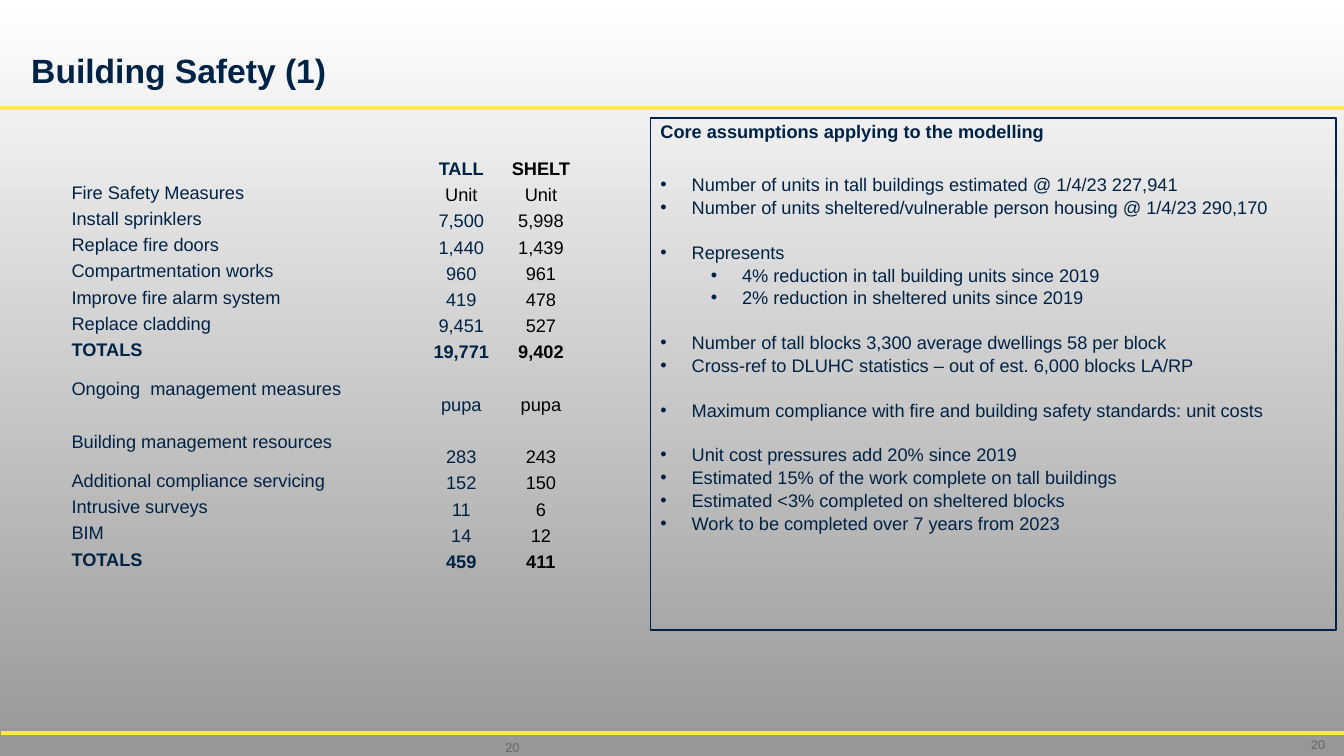
from lxml.etree import SubElement
from pptx import Presentation
from pptx.dml.color import RGBColor
from pptx.enum.shapes import MSO_CONNECTOR
from pptx.enum.text import MSO_ANCHOR, MSO_AUTO_SIZE, PP_ALIGN
from pptx.oxml.ns import qn
from pptx.util import Inches, Pt

NAVY = RGBColor(0x00, 0x22, 0x44)
BLACK = RGBColor(0, 0, 0)
GREY = RGBColor(0x66, 0x66, 0x66)
GOLD = RGBColor(0xFF, 0xE8, 0x50)
WHITE = RGBColor(0xFF, 0xFF, 0xFF)
ASH = RGBColor(0x97, 0x97, 0x97)
PLAIN = "{2D5ABB26-0587-4C30-8999-92F81FD0307C}"

COLS = [2.83, 0.65, 0.79, 0.79]
ROWS = [
    ("", "TALL", "SHELT"),
    ("Fire Safety Measures", "Unit", "Unit"),
    ("Install sprinklers", "7,500", "5,998"),
    ("Replace fire doors", "1,440", "1,439"),
    ("Compartmentation works", "960", "961"),
    ("Improve fire alarm system", "419", "478"),
    ("Replace cladding", "9,451", "527"),
    ("TOTALS", "19,771", "9,402"),
    ("Ongoing  management measures", "pupa", "pupa"),
    ("Building management resources", "283", "243"),
    ("Additional compliance servicing", "152", "150"),
    ("Intrusive surveys", "11", "6"),
    ("BIM", "14", "12"),
    ("TOTALS", "459", "411"),
]
TALL_ROWS = (8, 9)
HEAD = "Core assumptions applying to the modelling"
GROUPS = [
    [(0, "Number of units in tall buildings estimated @ 1/4/23 227,941"),
     (0, "Number of units sheltered/vulnerable person housing @ 1/4/23 290,170")],
    [(0, "Represents"),
     (1, "4% reduction in tall building units since 2019"),
     (1, "2% reduction in sheltered units since 2019")],
    [(0, "Number of tall blocks 3,300 average dwellings 58 per block"),
     (0, "Cross-ref to DLUHC statistics – out of est. 6,000 blocks LA/RP")],
    [(0, "Maximum compliance with fire and building safety standards: unit costs")],
    [(0, "Unit cost pressures add 20% since 2019"),
     (0, "Estimated 15% of the work complete on tall buildings"),
     (0, "Estimated <3% completed on sheltered blocks"),
     (0, "Work to be completed over 7 years from 2023")],
]


def put(item, **vals):
    """Set each given attribute on the item."""
    for key, val in vals.items():
        setattr(item, key, val)


def place(shape, box):
    """Move the shape to a box in inches."""
    put(shape, **dict(zip(("left", "top", "width", "height"), map(Inches, box))))


def write(para, text, size=13, color=NAVY, bold=False, **form):
    """Write one formatted run into the paragraph."""
    put(para, **form)
    run = para.add_run()
    run.text = text
    put(run.font, size=Pt(size), name="Arial", bold=bold)
    run.font.color.rgb = color


def mark(para, level):
    """Give the paragraph a bullet and a hanging indent, or neither."""
    props = para._p.get_or_add_pPr()
    if level is None:
        props.set("marL", "0")
        props.set("indent", "0")
        SubElement(props, qn("a:buNone"))
        return
    props.set("marL", str(Inches(0.31 + level * 0.5)))
    props.set("indent", str(Inches(-0.31)))
    SubElement(props, qn("a:buFont")).set("typeface", "Arial")
    SubElement(props, qn("a:buChar")).set("char", "•")


def paint(slide):
    """Fill the background with a gradient from top to bottom."""
    fill = slide.background.fill
    fill.gradient()
    fill.gradient_angle = 270
    for stop, color in zip(fill.gradient_stops, (WHITE, ASH)):
        stop.color.rgb = color


def rule(slide, left, top, right):
    """Draw a gold rule across the slide."""
    ends = map(Inches, (left, top, right, top))
    line = slide.shapes.add_connector(MSO_CONNECTOR.STRAIGHT, *ends)
    line.line.color.rgb = GOLD
    line.line.width = Pt(3)
    SubElement(line._element.spPr, qn("a:effectLst"))


def title(slide, box):
    """Place the slide title."""
    shape = slide.shapes.title
    place(shape, box)
    frame = shape.text_frame
    put(frame, vertical_anchor=MSO_ANCHOR.BOTTOM, auto_size=MSO_AUTO_SIZE.NONE)
    write(frame.paragraphs[0], "Building Safety (1)", 24, bold=True,
          alignment=PP_ALIGN.LEFT, line_spacing=0.9)


def number(slide, box):
    """Place a page number."""
    shape = slide.shapes.add_textbox(*map(Inches, box))
    frame = shape.text_frame
    put(frame, vertical_anchor=MSO_ANCHOR.MIDDLE, word_wrap=True)
    write(frame.paragraphs[0], "20", 9, GREY, alignment=PP_ALIGN.RIGHT)


def notes(slide, box):
    """Place the framed list of assumptions."""
    shape = slide.placeholders[1]
    place(shape, box)
    shape.line.color.rgb = NAVY
    shape.line.width = Pt(1)
    frame = shape.text_frame
    put(frame, vertical_anchor=MSO_ANCHOR.TOP, auto_size=MSO_AUTO_SIZE.NONE)
    para = frame.paragraphs[0]
    mark(para, None)
    write(para, HEAD, bold=True, line_spacing=0.9, space_before=Pt(0))
    for group in GROUPS:
        for index, (level, text) in enumerate(group):
            gap = 0.7 if index else 22 if group is GROUPS[0] else 16.3
            para = frame.add_paragraph()
            mark(para, level)
            write(para, text, level=level, line_spacing=1.0,
                  space_before=Pt(gap), space_after=Pt(0))


def fill_cell(cell, text, color, bold, label):
    """Format one table cell and write its text."""
    edge = Inches(0.01)
    put(cell, margin_left=edge, margin_right=edge, margin_top=edge, margin_bottom=0,
        vertical_anchor=MSO_ANCHOR.MIDDLE if label else MSO_ANCHOR.BOTTOM)
    cell.fill.background()
    para = cell.text_frame.paragraphs[0]
    if text:
        write(para, text, color=color, bold=bold,
              alignment=PP_ALIGN.LEFT if label else PP_ALIGN.CENTER)
    else:
        SubElement(para._p, qn("a:endParaRPr")).set("sz", "1300")


def costs(slide, box):
    """Place the table of unit costs."""
    frame = slide.shapes.add_table(len(ROWS), len(COLS), *map(Inches, box))
    table = frame.table
    put(table, first_row=False, horz_banding=False)
    table._tbl.tblPr.find(qn("a:tableStyleId")).text = PLAIN
    for col, width in zip(table.columns, COLS):
        col.width = Inches(width)
    for r, (label, tall, shelt) in enumerate(ROWS):
        table.rows[r].height = Inches(0.52 if r in TALL_ROWS else 0.26)
        bold = label in ("", "TOTALS")
        for c, text in enumerate((label, "", tall, shelt)):
            color = BLACK if c == 3 or (c == 2 and text == "Unit") else NAVY
            fill_cell(table.cell(r, c), text, color, bold, c == 0)


def main():
    """Build the slide and save it."""
    deck = Presentation()
    put(deck, slide_width=Inches(13.33), slide_height=Inches(7.5))
    slide = deck.slides.add_slide(deck.slide_layouts[1])
    paint(slide)
    rule(slide, 0, 1.07, 13.33)
    rule(slide, 0.01, 7.27, 13.33)
    title(slide, (0.21, 0.45, 12.24, 0.5))
    number(slide, (12.73, 7.27, 0.51, 0.23))
    number(slide, (4.74, 7.3, 0.51, 0.23))
    notes(slide, (6.45, 1.17, 6.8, 5.08))
    costs(slide, (0.7, 1.52, sum(COLS), 4.19))
    deck.save("out.pptx")


if __name__ == "__main__":
    main()
